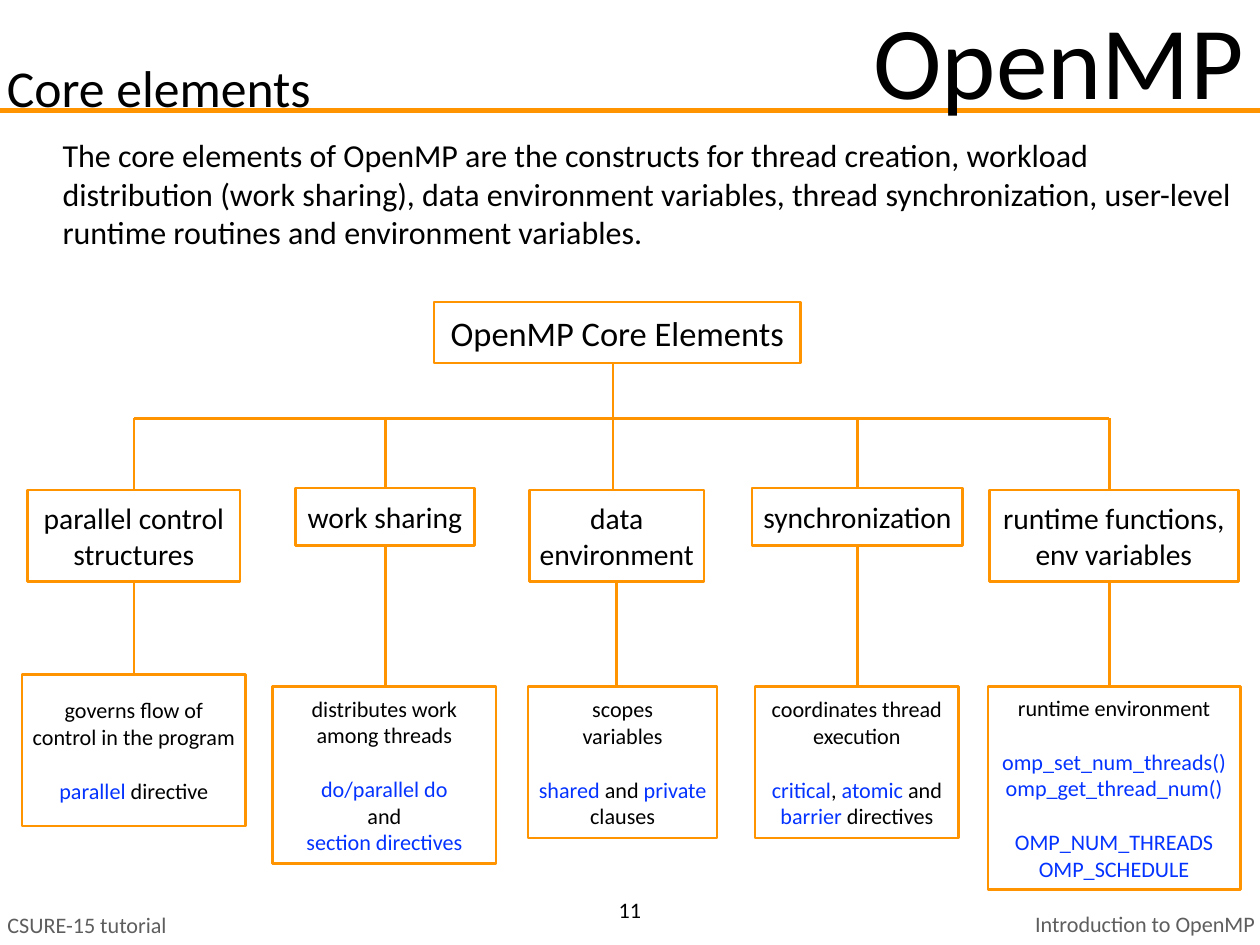
from dataclasses import dataclass

from lxml.etree import SubElement
from pptx import Presentation
from pptx.dml.color import RGBColor
from pptx.enum.shapes import MSO_CONNECTOR, MSO_SHAPE
from pptx.enum.text import MSO_ANCHOR as Anchor, MSO_AUTO_SIZE as AutoSize, PP_ALIGN as Align
from pptx.oxml.ns import qn
from pptx.util import Inches, Pt

# The slide is a grid of 128 columns by 96 rows of square cells.
COLUMNS, ROWS = 128, 96
CELL = Inches(1) / 9
ORANGE, BLUE, BLACK, GREY = "FF9300", "0433FF", "000000", "5E5E5E"
FONT = "Calibri"
BUS_ROW = 42.5
DETAIL_SIZE, DETAIL_GAP = 18, 22


@dataclass
class Branch:
    label: tuple
    label_box: tuple
    details: tuple
    detail_box: tuple
    rise: float  # column of the line above the label
    drop: float  # column of the line below the label


BRANCHES = [
    Branch(("parallel control", "structures"), (2.8, 49.8, 21.6, 9.25),
           (("governs flow of control in the program",), ("|parallel| directive",)),
           (2.25, 68.5, 22.7, 15.4), 13.6, 13.6),
    Branch(("work sharing",), (30, 49.6, 18.2, 5.8),
           (("distributes work among threads",),
            ("|do/parallel do|", "and", "|section directives|")),
           (27.7, 69.75, 22.7, 18), 39.15, 39.15),
    Branch(("data", "environment"), (53.8, 49.8, 17.7, 9.25),
           (("scopes", "variables"), ("|shared| and |private| clauses",)),
           (53.65, 69.75, 19.2, 15.4), 62.3, 62.65),
    Branch(("synchronization",), (76.4, 49.6, 21.4, 5.8),
           (("coordinates thread execution",),
            ("|critical|, |atomic| and |barrier| directives",)),
           (76.7, 69.75, 20.7, 15.4), 87.1, 87.1),
    Branch(("runtime functions,", "env variables"), (100.5, 49.8, 25.3, 9.25),
           (("runtime environment",),
            ("|omp_set_num_threads()|", "|omp_get_thread_num()|"),
            ("|OMP_NUM_THREADS|", "|OMP_SCHEDULE|")),
           (100.35, 69.75, 25.65, 20.6), 112.7, 112.7),
]


def color(hex_string):
    return RGBColor.from_string(hex_string)


def cells(*counts):
    return [round(count * CELL) for count in counts]


def set_format(target, formats):
    for name, value in formats.items():
        setattr(target, name, value)


def write(shape, groups, size, ink=BLACK, align=Align.LEFT, inset=0.5,
          wrap=True, anchor=Anchor.MIDDLE):
    """Write groups of lines with a gap between groups; text between bars is blue."""
    frame = shape.text_frame
    margin, = cells(inset)
    sides = ("left", "top", "right", "bottom")
    set_format(frame, {f"margin_{side}": margin for side in sides})
    set_format(frame, {"word_wrap": wrap, "vertical_anchor": anchor,
                       "auto_size": AutoSize.SHAPE_TO_FIT_TEXT})
    lines = [(line, group_no > 0 and line_no == 0)
             for group_no, group in enumerate(groups)
             for line_no, line in enumerate(group)]
    for line_no, (line, opens_group) in enumerate(lines):
        paragraph = frame.paragraphs[0] if line_no == 0 else frame.add_paragraph()
        paragraph.alignment = align
        if opens_group:
            paragraph.space_before = Pt(DETAIL_GAP)
        for piece_no, piece in enumerate(line.split("|")):
            if piece:
                run = paragraph.add_run()
                run.text = piece
                set_format(run.font, {"name": FONT, "size": Pt(size)})
                run.font.color.rgb = color(BLUE if piece_no % 2 else ink)


def add_text(slide, box, text, size, **style):
    write(slide.shapes.add_textbox(*cells(*box)), ((text,),), size, **style)


def add_box(slide, box, groups, size, wrap):
    outline = slide.shapes.add_shape(MSO_SHAPE.RECTANGLE, *cells(*box))
    outline.shadow.inherit = False
    outline.fill.background()
    outline.line.color.rgb = color(ORANGE)
    outline.line.width = Pt(2)
    write(outline, groups, size, align=Align.CENTER, inset=1, wrap=wrap)


def add_line(slide, start, end, width=2):
    line = slide.shapes.add_connector(MSO_CONNECTOR.STRAIGHT, *cells(*start, *end))
    line.line.color.rgb = color(ORANGE)
    line.line.width = Pt(width)
    SubElement(line._element.spPr, qn("a:effectLst"))


def add_branch(slide, branch):
    _, label_top, _, label_height = branch.label_box
    detail_top = branch.detail_box[1]
    add_box(slide, branch.label_box, (branch.label,), 24, wrap=False)
    add_box(slide, branch.detail_box, branch.details, DETAIL_SIZE, wrap=True)
    add_line(slide, (branch.rise, BUS_ROW), (branch.rise, label_top))
    add_line(slide, (branch.drop, label_top + label_height), (branch.drop, detail_top))


def add_tree(slide):
    root_left, root_top, root_width, root_height = root = (44.1, 30.7, 37.2, 6.2)
    trunk = BRANCHES[2].rise
    add_box(slide, root, (("OpenMP Core Elements",),), 28, wrap=False)
    add_line(slide, (trunk, root_top + root_height), (trunk, BUS_ROW))
    add_line(slide, (BRANCHES[0].rise, BUS_ROW), (BRANCHES[-1].rise, BUS_ROW))
    for branch in BRANCHES:
        add_branch(slide, branch)


def add_frame(slide):
    """Add the header rule, the headings, the introduction and the footer."""
    add_line(slide, (0, 11.25), (COLUMNS, 11.25), width=4)
    add_text(slide, (92.1, 92, 35.9, 3.6), "Introduction to OpenMP", 18,
             ink=GREY, align=Align.RIGHT)
    add_text(slide, (0.25, 92.1, 35.9, 3.75), "CSURE-15 tutorial", 18, ink=GREY)
    add_text(slide, (5.85, -0.35, 121, 12.6), "OpenMP", 84, align=Align.RIGHT)
    add_text(slide, (5.85, 13.5, 121, 12.25),
             "The core elements of OpenMP are the constructs for thread creation, "
             "workload distribution (work sharing), data environment variables, "
             "thread synchronization, user-level runtime routines and environment "
             "variables.", 26)
    add_text(slide, (62.3, 91.1, 3.4, 3.6), "11", 18, align=Align.CENTER,
             inset=0, wrap=False, anchor=Anchor.TOP)
    add_text(slide, (0.2, 5.15, 49.9, 7.4), "Core elements", 42)


def main():
    deck = Presentation()
    deck.slide_width, deck.slide_height = cells(COLUMNS, ROWS)
    slide = deck.slides.add_slide(deck.slide_layouts[6])
    add_frame(slide)
    add_tree(slide)
    deck.save("out.pptx")


if __name__ == "__main__":
    main()
